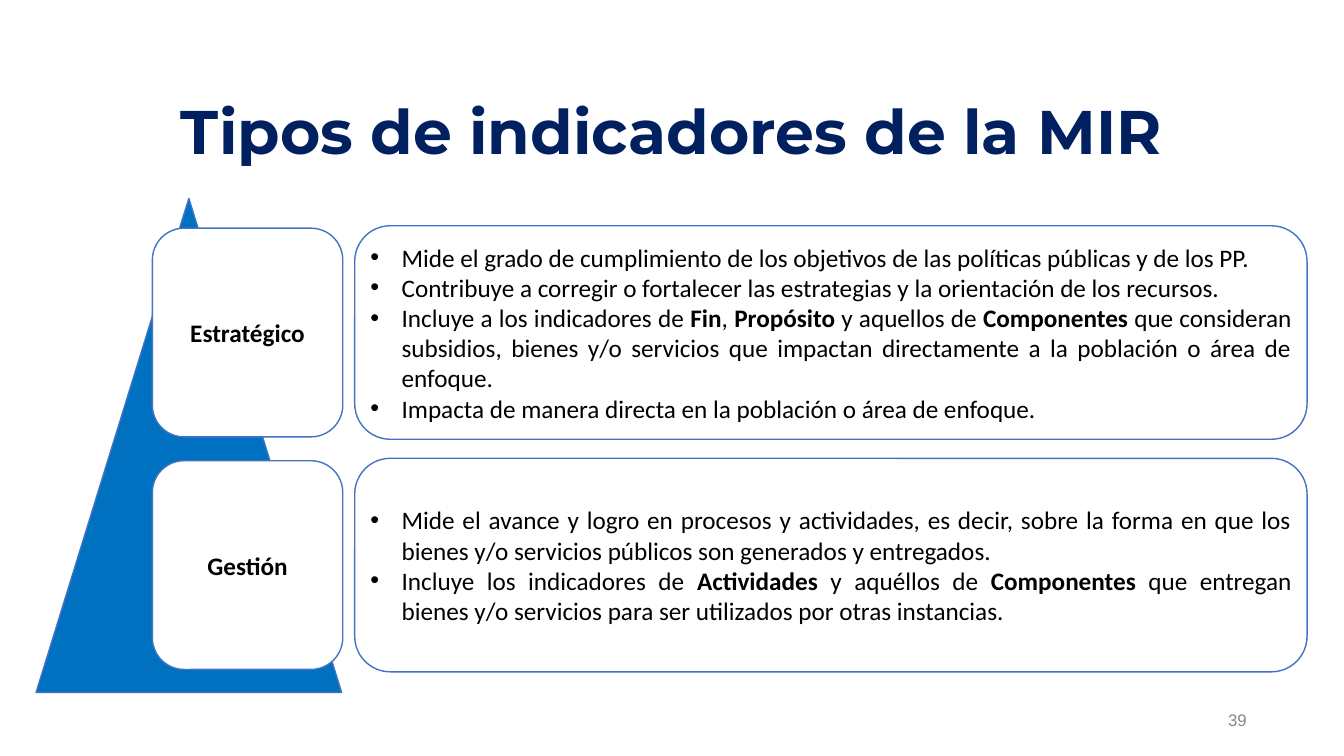
from lxml import etree
from pptx import Presentation
from pptx import util as u
from pptx.dml import color
from pptx.enum import shapes, text
from pptx.oxml import ns

Cm = u.Cm
HUES = {"navy": "002060", "blue": "0070C0", "edge": "4472C4",
        "white": "FFFFFF", "black": "000000", "gray": "888888"}
ROWS = [
    ("Estratégico", [
        [("Mide el grado de cumplimiento de los objetivos de las políticas públicas y de los PP.", False)],
        [("Contribuye a corregir o fortalecer las estrategias y la orientación de los recursos.", False)],
        [("Incluye a los indicadores de ", False), ("Fin", True), (", ", False),
         ("Propósito", True), (" y aquellos de ", False), ("Componentes", True),
         (" que consideran subsidios, bienes y/o servicios que impactan directamente "
          "a la población o área de enfoque.", False)],
        [("Impacta de manera directa en la población o área de enfoque.", False)],
    ]),
    ("Gestión", [
        [("Mide el avance y logro en procesos y actividades, es decir, sobre la forma en que "
          "los bienes y/o servicios públicos son generados y entregados.", False)],
        [("Incluye los indicadores de ", False), ("Actividades", True),
         (" y aquéllos de ", False), ("Componentes ", True),
         ("que entregan bienes y/o servicios para ser utilizados por otras instancias.", False)],
    ]),
]


def hue(name):
    return color.RGBColor.from_string(HUES[name])


def write(par, words, size, face, tint, bold=False):
    run = par.add_run()
    run.text = words
    font = run.font
    font.size, font.name, font.bold = u.Pt(size), face, bold
    font.color.rgb = hue(tint)


def setup(frame, anchor, wrap=True):
    frame.word_wrap = wrap
    frame.auto_size = text.MSO_AUTO_SIZE.NONE
    frame.vertical_anchor = anchor
    frame.margin_left = frame.margin_right = Cm(0.13)
    frame.margin_top = frame.margin_bottom = Cm(0.13)


def draw(slide, kind, box, fill):
    shape = slide.shapes.add_shape(kind, *map(Cm, box))
    shape.shadow.inherit = False
    shape.fill.solid()
    shape.fill.fore_color.rgb = hue(fill)
    shape.line.color.rgb = hue("edge")
    shape.line.width = u.Pt(1)
    setup(shape.text_frame, text.MSO_ANCHOR.MIDDLE)
    return shape


def bullet(par):
    props = par._p.get_or_add_pPr()
    props.set("marL", str(Cm(0.79)))
    props.set("indent", str(-Cm(0.79)))
    etree.SubElement(props, ns.qn("a:buFont")).set("typeface", "Arial")
    etree.SubElement(props, ns.qn("a:buChar")).set("char", "•")


def head(slide, box):
    title = slide.shapes.title
    title.left, title.top, title.width, title.height = map(Cm, box)
    setup(title.text_frame, text.MSO_ANCHOR.BOTTOM)
    par = title.text_frame.paragraphs[0]
    par.alignment = text.PP_ALIGN.CENTER
    par.line_spacing = 0.9
    write(par, "Tipos de indicadores de la MIR", 44, "Montserrat", "navy", True)


def level(slide, box, name, items):
    left, top, width, height = box
    side, gap, trim = 4.8, 0.3, 0.06
    kind = shapes.MSO_SHAPE.ROUNDED_RECTANGLE
    label = draw(slide, kind, (left, top + trim, side, height - 2 * trim), "white")
    par = label.text_frame.paragraphs[0]
    par.alignment = text.PP_ALIGN.CENTER
    write(par, name, 18, "Calibri", "black", True)

    start = side + gap
    panel = draw(slide, kind, (left + start, top, width - start, height), "white")
    frame = panel.text_frame
    for i, item in enumerate(items):
        par = frame.add_paragraph() if i else frame.paragraphs[0]
        par.alignment = text.PP_ALIGN.JUSTIFY
        bullet(par)
        for words, bold in item:
            write(par, words, 18, "Calibri", "black", bold)


def folio(slide, box):
    frame = slide.shapes.add_textbox(*map(Cm, box)).text_frame
    setup(frame, text.MSO_ANCHOR.MIDDLE, False)
    par = frame.paragraphs[0]
    par.alignment = text.PP_ALIGN.RIGHT
    write(par, "39", 12, "Arial", "gray")


def main():
    deck = Presentation()
    deck.slide_width, deck.slide_height = Cm(33.87), Cm(19.05)
    slide = deck.slides.add_slide(deck.slide_layouts[5])
    head(slide, (2.31, 2.18, 29.24, 2.18))
    folio(slide, (30.81, 17.78, 0.74, 0.74))
    draw(slide, shapes.MSO_SHAPE.ISOSCELES_TRIANGLE, (0.91, 5, 7.7, 12.45), "blue")
    for i, (name, items) in enumerate(ROWS):
        level(slide, (3.84, 5.69 + 5.86 * i, 29.1, 5.38), name, items)
    deck.save("out.pptx")


if __name__ == "__main__":
    main()
